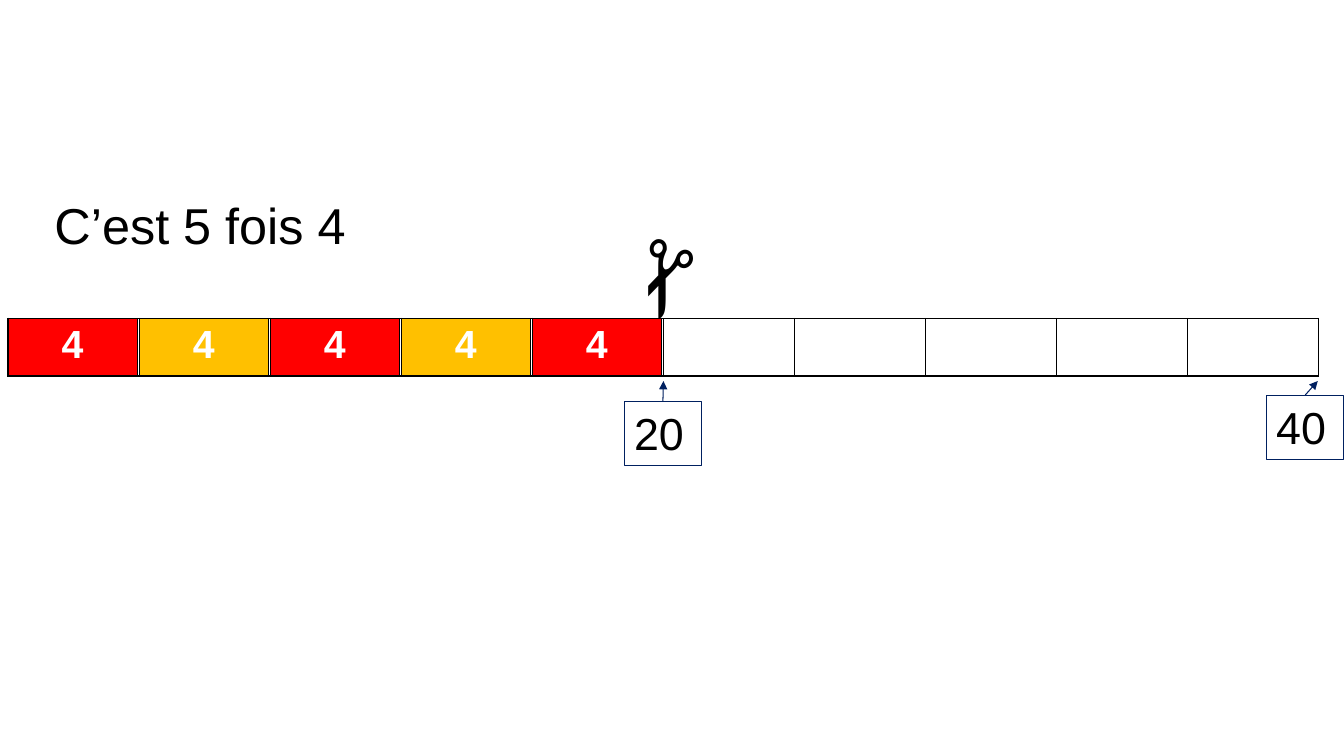
"""Build a slide showing a number strip of ten cells, five of them filled with fours."""
from dataclasses import dataclass

from lxml.etree import SubElement
from pptx import Presentation
from pptx.dml.color import RGBColor
from pptx.enum.shapes import MSO_CONNECTOR
from pptx.enum.text import MSO_ANCHOR, PP_ALIGN
from pptx.oxml.ns import qn
from pptx.slide import Slide
from pptx.text.text import TextFrame
from pptx.util import Inches, Pt


@dataclass(frozen=True)
class Theme:
    font: str = "Arial"
    black: str = "000000"
    white: str = "FFFFFF"
    red: str = "FF0000"
    amber: str = "FFC000"
    navy: str = "002060"
    title: int = 36
    number: int = 28
    label: int = 32
    scissors: int = 72
    border: float = 1
    outline: float = 0.75


@dataclass(frozen=True)
class Marker:
    text: str
    left: float
    top: float
    tip_x: float


THEME = Theme()
STRIP_LEFT, STRIP_TOP, STRIP_HEIGHT = 0.08, 3.16, 0.57
CELL_PITCH, TILE_WIDTH = 1.3, 1.28
CELL_COUNT, TILE_COUNT = 10, 5
MARKER_WIDTH, MARKER_HEIGHT, TIP_Y = 0.77, 0.64, 3.78
MARKERS = [Marker("20", 6.19, 3.98, 6.58), Marker("40", 12.56, 3.92, 13.07)]


def write(tf: TextFrame, text: str, *, size: int, color: str = THEME.black,
          bold: bool = False, align: PP_ALIGN = PP_ALIGN.LEFT) -> None:
    tf.word_wrap = True
    p = tf.paragraphs[0]
    p.alignment = align
    r = p.add_run()
    r.text = text
    r.font.name = THEME.font
    r.font.size = Pt(size)
    r.font.bold = bold
    r.font.color.rgb = RGBColor.from_string(color)


def add_strip(s: Slide, left: float, width: float, count: int = 1,
              text: str = "", fill: str | None = None) -> None:
    table = s.shapes.add_table(1, count, Inches(left), Inches(STRIP_TOP),
                               Inches(width * count), Inches(STRIP_HEIGHT)).table
    table.first_row = table.horz_banding = False
    for column in table.columns:
        column.width = Inches(width)
    for cell in table.iter_cells():
        tc_pr = cell._tc.get_or_add_tcPr()
        for side in ("a:lnL", "a:lnR", "a:lnT", "a:lnB"):
            ln = SubElement(tc_pr, qn(side), w=str(Pt(THEME.border)))
            SubElement(SubElement(ln, qn("a:solidFill")), qn("a:srgbClr"), val=THEME.black)
        if fill:
            cell.fill.solid()
            cell.fill.fore_color.rgb = RGBColor.from_string(fill)
            write(cell.text_frame, text, size=THEME.number, color=THEME.white,
                  bold=True, align=PP_ALIGN.CENTER)
        else:
            cell.fill.background()


def add_marker(s: Slide, marker: Marker) -> None:
    sp = s.shapes.add_textbox(Inches(marker.left), Inches(marker.top),
                              Inches(MARKER_WIDTH), Inches(MARKER_HEIGHT))
    write(sp.text_frame, marker.text, size=THEME.label)
    arrow = s.shapes.add_connector(MSO_CONNECTOR.STRAIGHT, 0, 0,
                                   Inches(marker.tip_x), Inches(TIP_Y))
    arrow.begin_connect(sp, 0)
    for line in (sp.line, arrow.line):
        line.color.rgb = RGBColor.from_string(THEME.navy)
        line.width = Pt(THEME.outline)
    SubElement(arrow.line._get_or_add_ln(), qn("a:tailEnd"), type="triangle")
    SubElement(arrow._element.spPr, qn("a:effectLst"))


def add_title(s: Slide, text: str) -> None:
    title = s.shapes.title
    title.left, title.top = Inches(0.44), Inches(1.88)
    title.width, title.height = Inches(4.95), Inches(0.71)
    title.text_frame.vertical_anchor = MSO_ANCHOR.TOP
    write(title.text_frame, text, size=THEME.title)


def add_scissors(s: Slide) -> None:
    sp = s.shapes.add_textbox(Inches(6.05), Inches(2.2), Inches(1.17), Inches(1.31))
    sp.rotation = 90
    write(sp.text_frame, "✁", size=THEME.scissors)


def main() -> None:
    prs = Presentation()
    prs.slide_width, prs.slide_height = Inches(13.33), Inches(7.5)
    s = prs.slides.add_slide(prs.slide_layouts.get_by_name("Title Only"))
    add_title(s, "C’est 5 fois 4")
    add_strip(s, STRIP_LEFT, CELL_PITCH, CELL_COUNT)
    for i in range(TILE_COUNT):
        add_strip(s, STRIP_LEFT + i * CELL_PITCH, TILE_WIDTH, text="4",
                  fill=THEME.amber if i % 2 else THEME.red)
    for marker in MARKERS:
        add_marker(s, marker)
    add_scissors(s)
    prs.save("out.pptx")


if __name__ == "__main__":
    main()
